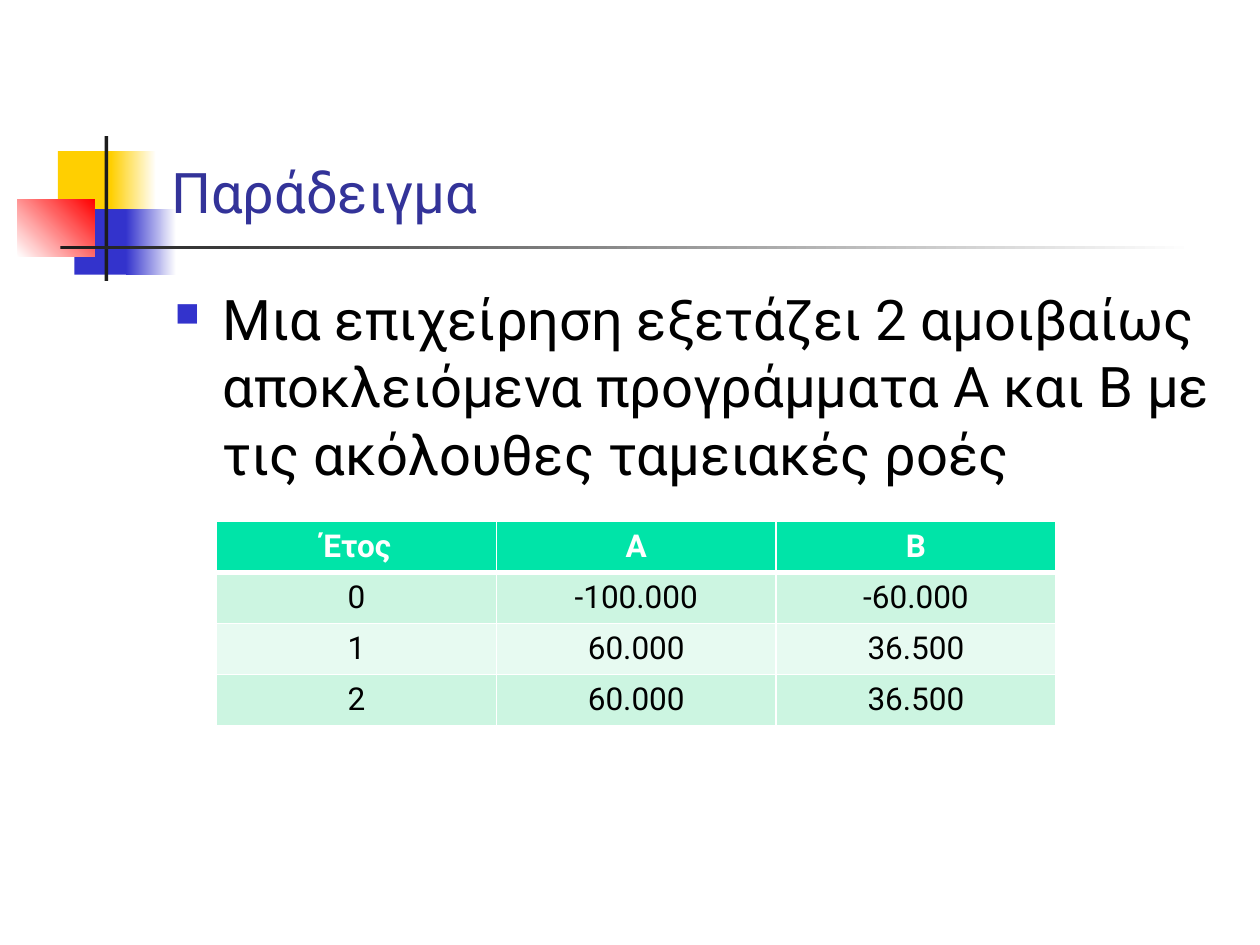
from lxml import etree
from pptx import Presentation
from pptx import util as u
from pptx.dml.color import RGBColor
from pptx.enum import shapes, text
from pptx.oxml.ns import qn

FONT = "Roboto"
HEX = {
    "white": "FFFFFF", "black": "000000", "gold": "FFCF01", "blue": "3333CC",
    "red": "FF0000", "ink": "1C1C1C", "title": "333399",
    "head": "00E4A8", "dark": "CCF5E1", "light": "E7FAF1",
}
TITLE = "Παράδειγμα"
BODY = ("Μια επιχείρηση εξετάζει 2 αμοιβαίως αποκλειόμενα προγράμματα "
        "Α και Β με τις ακόλουθες ταμειακές ροές")
FLOWS = [
    ("Έτος", "Α", "Β"),
    ("0", "-100.000", "-60.000"),
    ("1", "60.000", "36.500"),
    ("2", "60.000", "36.500"),
]
# left, top, width, height, colours from start to end, angle
DECOR = [
    (0.46, 1.2, 0.48, 0.52, ["gold"], 0),
    (0.88, 1.2, 0.36, 0.52, ["gold", "white"], 0),
    (0.59, 1.66, 0.46, 0.52, ["blue"], 0),
    (1, 1.66, 0.4, 0.52, ["blue", "white"], 0),
    (0.14, 1.58, 0.61, 0.46, ["white", "red"], 45),
    (0.83, 1.08, 0.03, 1.15, ["ink"], 0),
    (0.48, 1.95, 9, 0.03, ["ink", "white"], 0),
]
GRID = {"left": 1.72, "top": 4.14, "col": 2.22, "row": 0.405}


def rgb(name):
    return RGBColor.from_string(HEX[name])


def style(para, size, color, bold=False):
    font = para.font
    font.name, font.size, font.bold = FONT, u.Pt(size), bold
    font.color.rgb = rgb(color)


def block(slide, left, top, width, height, tones, angle):
    box = slide.shapes.add_shape(
        shapes.MSO_SHAPE.RECTANGLE, *map(u.Inches, (left, top, width, height)))
    box.shadow.inherit = False
    box.line.fill.background()
    if len(tones) == 1:
        box.fill.solid()
        box.fill.fore_color.rgb = rgb(tones[0])
        return
    box.fill.gradient()
    box.fill.gradient_angle = angle
    for stop, tone, place in zip(box.fill.gradient_stops, tones, (0, 1)):
        stop.color.rgb = rgb(tone)
        stop.position = place


def label(slide, place, words, color, anchor):
    box = slide.shapes.add_textbox(*map(u.Inches, place))
    frame = box.text_frame
    frame.word_wrap = True
    frame.vertical_anchor = anchor
    frame.text = words
    para = frame.paragraphs[0]
    style(para, 32, color)
    return para


def bullet(para):
    props = para._p.get_or_add_pPr()
    indent = u.Inches(0.38)
    props.set("marL", str(indent))
    props.set("indent", str(-indent))
    tone = etree.Element(qn("a:buClr"))
    etree.SubElement(tone, qn("a:srgbClr"), val=HEX["blue"])
    size = etree.Element(qn("a:buSzPct"), val="60000")
    mark = etree.Element(qn("a:buChar"), char="■")
    for at, item in enumerate((tone, size, mark)):
        props.insert(at, item)


def border(cell, row):
    props = cell._tc.get_or_add_tcPr()
    widths = {"L": 1, "R": 1, "T": 3 if row == 1 else 1, "B": 3 if row == 0 else 1}
    for side, width in widths.items():
        line = etree.SubElement(props, qn("a:ln" + side), w=str(u.Pt(width)))
        fill = etree.SubElement(line, qn("a:solidFill"))
        etree.SubElement(fill, qn("a:srgbClr"), val=HEX["white"])


def table(slide):
    rows, cols = len(FLOWS), len(FLOWS[0])
    size = (GRID["left"], GRID["top"], cols * GRID["col"], rows * GRID["row"])
    grid = slide.shapes.add_table(rows, cols, *map(u.Inches, size)).table
    for r, flow in enumerate(FLOWS):
        for c, words in enumerate(flow):
            cell = grid.cell(r, c)
            border(cell, r)
            cell.fill.solid()
            tone = "head" if r == 0 else "dark" if r % 2 else "light"
            cell.fill.fore_color.rgb = rgb(tone)
            cell.text_frame.text = words
            para = cell.text_frame.paragraphs[0]
            para.alignment = text.PP_ALIGN.CENTER
            style(para, 18, "black" if r else "white", r == 0)


def main():
    deck = Presentation()
    deck.slide_width, deck.slide_height = u.Inches(10), u.Inches(7.5)
    slide = deck.slides.add_slide(deck.slide_layouts[6])
    for item in DECOR:
        block(slide, *item)
    label(slide, (1.26, 0.23, 8.52, 1.6), TITLE, "title", text.MSO_ANCHOR.BOTTOM)
    bullet(label(slide, (1.29, 2.21, 8.5, 4.5), BODY, "black", text.MSO_ANCHOR.TOP))
    table(slide)
    deck.save("out.pptx")


if __name__ == "__main__":
    main()
